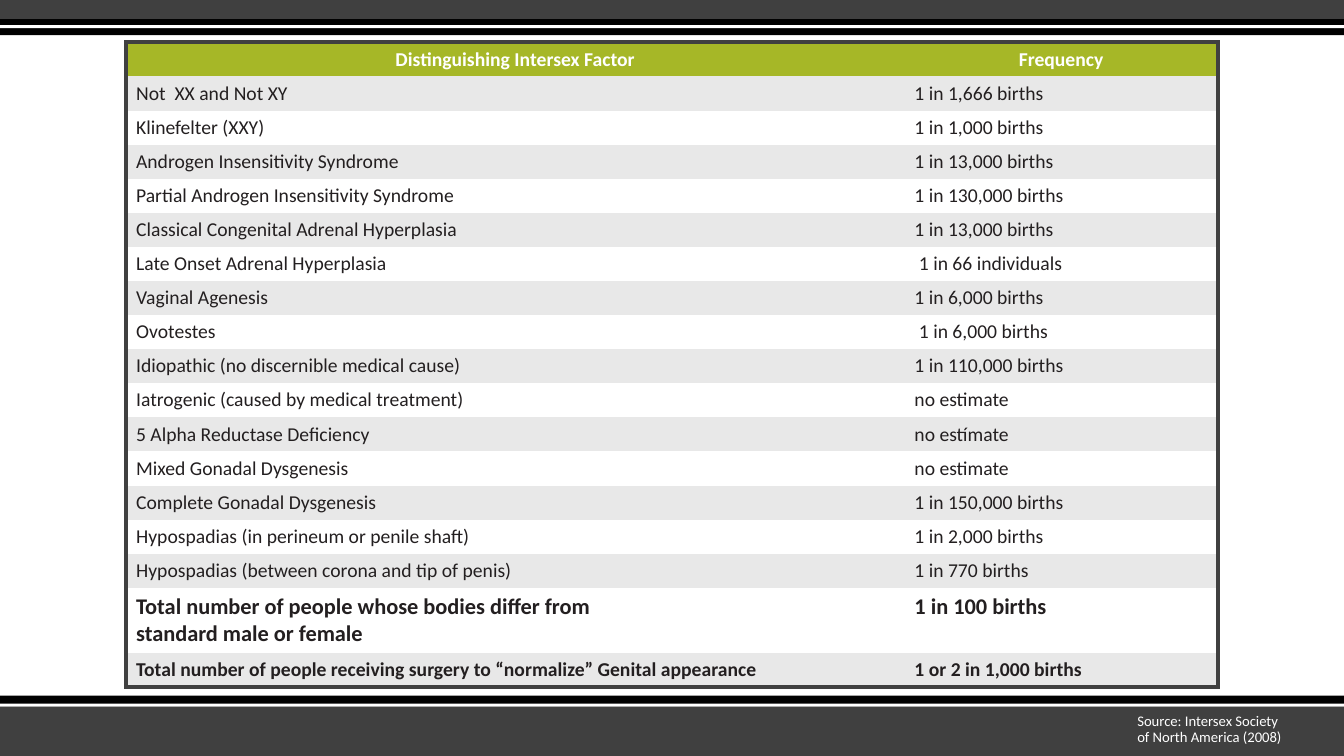
from dataclasses import dataclass

from lxml import etree
from pptx import Presentation
from pptx import util as u
from pptx.dml import color
from pptx.enum import shapes, text
from pptx.oxml import ns


@dataclass(frozen=True)
class Theme:
    """Colours, font and type sizes of the slide."""
    charcoal: str = "404040"
    black: str = "000000"
    white: str = "FFFFFF"
    green: str = "A6B727"
    grey: str = "E8E8E8"
    ink: str = "231F20"
    font: str = "Calibri"
    body: float = 14
    emphasis: float = 16
    source: float = 10.5
    border: float = 3


THEME = Theme()
NO_GRID_STYLE = "{2D5ABB26-0587-4C30-8999-92F81FD0307C}"
SLIDE_WIDTH, SLIDE_HEIGHT = 13.33, 7.5
TOTAL_ROW_HEIGHT = 0.64
HEADER = ("Distinguishing Intersex Factor", "Frequency")
FACTORS = [
    ("Not  XX and Not XY", "1 in 1,666 births"),
    ("Klinefelter (XXY)", "1 in 1,000 births"),
    ("Androgen Insensitivity Syndrome", "1 in 13,000 births"),
    ("Partial Androgen Insensitivity Syndrome", "1 in 130,000 births"),
    ("Classical Congenital Adrenal Hyperplasia", "1 in 13,000 births"),
    ("Late Onset Adrenal Hyperplasia", " 1 in 66 individuals"),
    ("Vaginal Agenesis", "1 in 6,000 births"),
    ("Ovotestes", " 1 in 6,000 births"),
    ("Idiopathic (no discernible medical cause)", "1 in 110,000 births"),
    ("Iatrogenic (caused by medical treatment)", "no estimate"),
    ("5 Alpha Reductase Deficiency", "no estímate"),
    ("Mixed Gonadal Dysgenesis", "no estimate"),
    ("Complete Gonadal Dysgenesis", "1 in 150,000 births"),
    ("Hypospadias (in perineum or penile shaft)", "1 in 2,000 births"),
    ("Hypospadias (between corona and tip of penis)", "1 in 770 births"),
]
DIFFERING_TOTAL = (
    "Total number of people whose bodies differ from\nstandard male or female",
    "1 in 100 births",
)
SURGERY_TOTAL = (
    "Total number of people receiving surgery to “normalize” Genital appearance",
    "1 or 2 in 1,000 births",
)


def write_text(frame, content, size=THEME.body, ink=THEME.ink, bold=False,
               align=text.PP_ALIGN.LEFT, spacing=None):
    """Write each line of the content as a formatted paragraph."""
    for index, line in enumerate(content.split("\n")):
        paragraph = frame.add_paragraph() if index else frame.paragraphs[0]
        paragraph.alignment = align
        paragraph.line_spacing = spacing
        run = paragraph.add_run()
        run.text = line
        run.font.name = THEME.font
        run.font.size = u.Pt(size)
        run.font.bold = bold
        run.font.color.rgb = color.RGBColor.from_string(ink)


def add_bands(slide, top, bands):
    """Draw full-width bands given as offset, height and colour."""
    for offset, height, fill in bands:
        shape = slide.shapes.add_shape(
            shapes.MSO_SHAPE.RECTANGLE, 0, u.Inches(top + offset),
            u.Inches(SLIDE_WIDTH), u.Inches(height))
        shape.shadow.inherit = False
        shape.fill.solid()
        shape.fill.fore_color.rgb = color.RGBColor.from_string(fill)
        shape.line.fill.background()


def add_borders(cell, sides):
    """Draw the outer frame on the given sides, ordered among L, R, T, B."""
    properties = cell._tc.get_or_add_tcPr()
    for index, side in enumerate(sides):
        line = etree.Element(ns.qn(f"a:ln{side}"), w=str(u.Pt(THEME.border)))
        fill = etree.SubElement(line, ns.qn("a:solidFill"))
        etree.SubElement(fill, ns.qn("a:srgbClr"), val=THEME.charcoal)
        properties.insert(index, line)


def add_frequency_table(slide, left, top, width, height):
    """Place the framed table of factors and their frequencies."""
    rows = [HEADER, *FACTORS, DIFFERING_TOTAL, SURGERY_TOTAL]
    last = len(rows) - 1
    table = slide.shapes.add_table(
        len(rows), 2, u.Inches(left), u.Inches(top),
        u.Inches(width), u.Inches(height)).table
    table._tbl.tblPr.find(ns.qn("a:tableStyleId")).text = NO_GRID_STYLE
    frequency_width = 3.11
    table.columns[0].width = u.Inches(width - frequency_width)
    table.columns[1].width = u.Inches(frequency_width)
    row_height = (height - TOTAL_ROW_HEIGHT) / last
    formats = {
        HEADER: dict(ink=THEME.white, bold=True, align=text.PP_ALIGN.CENTER),
        DIFFERING_TOTAL: dict(size=THEME.emphasis, bold=True),
        SURGERY_TOTAL: dict(bold=True),
    }
    for index, row in enumerate(rows):
        tall = row == DIFFERING_TOTAL
        table.rows[index].height = u.Inches(TOTAL_ROW_HEIGHT if tall else row_height)
        fill = THEME.grey if index % 2 else THEME.white
        for column, content in enumerate(row):
            cell = table.cell(index, column)
            cell.fill.solid()
            cell.fill.fore_color.rgb = color.RGBColor.from_string(
                fill if index else THEME.green)
            write_text(cell.text_frame, content, **formats.get(row, {}))
            edge = "T" if index == 0 else "B" if index == last else ""
            add_borders(cell, "LR"[column] + edge)


def add_source(slide, left, top, width, height):
    """Place the source line in the bottom band."""
    box = slide.shapes.add_textbox(
        u.Inches(left), u.Inches(top), u.Inches(width), u.Inches(height))
    box.text_frame.word_wrap = True
    write_text(box.text_frame, "Source: Intersex Society \nof North America (2008)",
               size=THEME.source, ink=THEME.white,
               align=text.PP_ALIGN.CENTER, spacing=0.9)


def main():
    """Build the slide and save it."""
    presentation = Presentation()
    presentation.slide_width = u.Inches(SLIDE_WIDTH)
    presentation.slide_height = u.Inches(SLIDE_HEIGHT)
    slide = presentation.slides.add_slide(presentation.slide_layouts[6])
    add_bands(slide, 6.9, [(0.1, 0.5, THEME.charcoal), (0, 0.11, THEME.black),
                           (0.08, 0.03, THEME.white)])
    add_bands(slide, 0, [(0, 0.19, THEME.charcoal), (0.19, 0.16, THEME.black),
                         (0.25, 0.03, THEME.white)])
    add_frequency_table(slide, 1.25, 0.42, 10.83, 6.39)
    add_source(slide, 10.37, 7.03, 3.25, 0.42)
    presentation.save("out.pptx")


if __name__ == "__main__":
    main()
